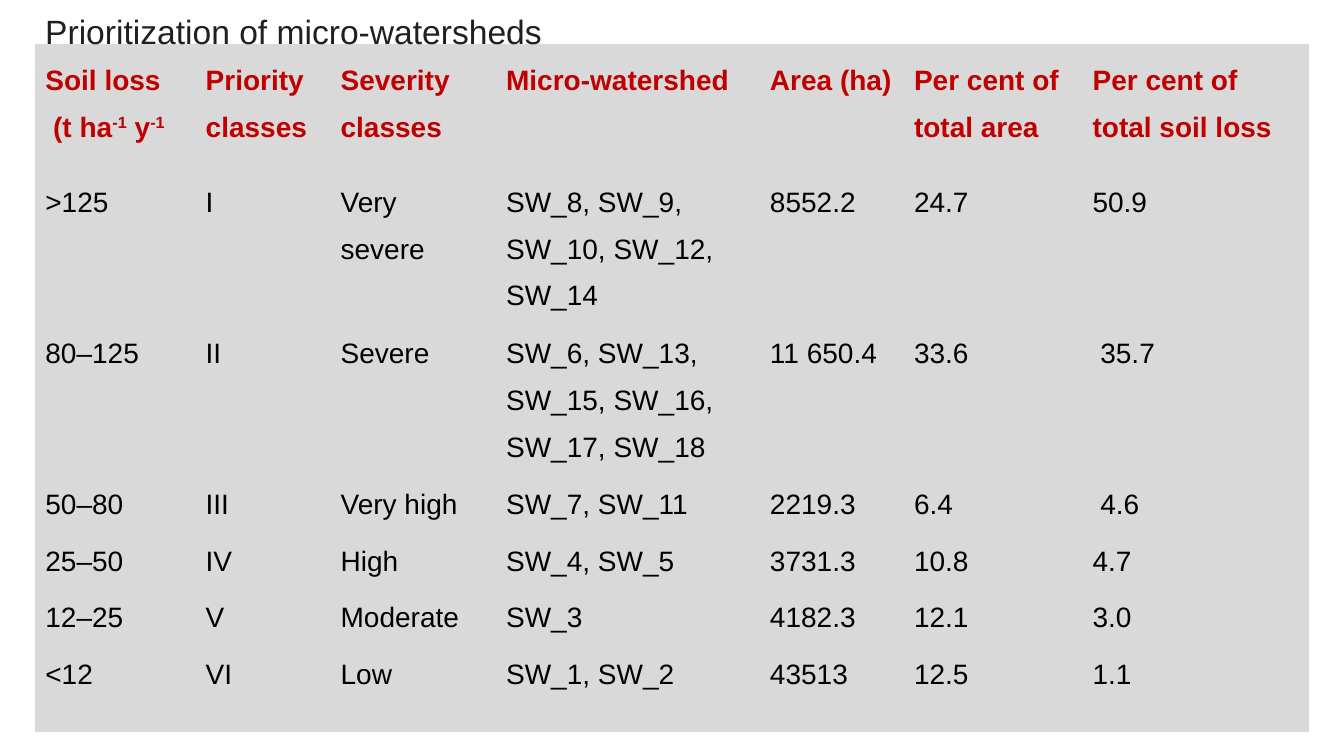
from dataclasses import dataclass

from pptx import Presentation
from pptx.dml.color import RGBColor as Rgb
from pptx.enum.text import MSO_AUTO_SIZE as AutoSize
from pptx.util import Cm, Pt


@dataclass(frozen=True)
class Theme:
    font: str = "Arial"
    title_size: int = 24
    table_size: int = 20
    line_spacing: float = 1.5
    title: Rgb = Rgb(0x23, 0x1F, 0x20)
    header: Rgb = Rgb(0xC0, 0x00, 0x00)
    body: Rgb = Rgb(0x00, 0x00, 0x00)
    cell: Rgb = Rgb(0xD9, 0xD9, 0xD9)


THEME = Theme()
NO_STYLE_NO_GRID = "{2D5ABB26-0587-4C30-8999-92F81FD0307C}"

COLUMN_WIDTHS = [4.04, 3.4, 4.17, 6.65, 3.63, 4.5, 5.72]
ROW_HEIGHTS = [3.07, 3.81, 3.78, 1.32, 1.32, 1.32, 2.34]

# Text between carets is superscript.
HEADERS = [
    "Soil loss\n (t ha^-1^ y^-1^", "Priority\nclasses", "Severity classes",
    "Micro-watershed", "Area (ha)", "Per cent of\ntotal area",
    "Per cent of\ntotal soil loss",
]
WATERSHED_CLASSES = [
    [">125", "I", "Very severe", "SW_8, SW_9, SW_10, SW_12, SW_14",
     "8552.2", "24.7", "50.9"],
    ["80–125", "II", "Severe", "SW_6, SW_13, SW_15, SW_16, SW_17, SW_18",
     "11 650.4", "33.6", " 35.7"],
    ["50–80", "III", "Very high", "SW_7, SW_11", "2219.3", "6.4", " 4.6"],
    ["25–50", "IV", "High", "SW_4, SW_5", "3731.3", "10.8", "4.7"],
    ["12–25", "V", "Moderate", "SW_3", "4182.3", "12.1", "3.0"],
    ["<12", "VI", "Low", "SW_1, SW_2", "43513", "12.5", "1.1"],
]


def format_run(run, size, color, bold=False):
    run.font.name = THEME.font
    run.font.size = Pt(size)
    run.font.color.rgb = color
    run.font.bold = bold


def fill_cell(cell, text, color, bold):
    cell.fill.solid()
    cell.fill.fore_color.rgb = THEME.cell
    cell.text_frame.text = text.replace("^", "")
    for para, line in zip(cell.text_frame.paragraphs, text.split("\n")):
        para.line_spacing = THEME.line_spacing
        if "^" in line:
            write_superscripts(para, line)
        for run in para.runs:
            format_run(run, THEME.table_size, color, bold)


def write_superscripts(para, line):
    para.clear()
    for index, part in enumerate(line.split("^")):
        if part:
            run = para.add_run()
            run.text = part
            if index % 2:
                run._r.get_or_add_rPr().set("baseline", "30000")


def add_title(page, left, top, width, height):
    box = page.shapes.add_textbox(Cm(left), Cm(top), Cm(width), Cm(height))
    frame = box.text_frame
    frame.text = "Prioritization of micro-watersheds"
    frame.word_wrap = False
    frame.auto_size = AutoSize.SHAPE_TO_FIT_TEXT
    format_run(frame.paragraphs[0].runs[0], THEME.title_size, THEME.title)


def add_priority_table(page, left, top):
    rows = [HEADERS, *WATERSHED_CLASSES]
    graphic = page.shapes.add_table(
        len(rows), len(HEADERS), Cm(left), Cm(top),
        Cm(sum(COLUMN_WIDTHS)), Cm(sum(ROW_HEIGHTS)))
    table = graphic.table
    table.horz_banding = False
    table.first_row = False
    table._tbl.tblPr[0].text = NO_STYLE_NO_GRID
    for column, width in zip(table.columns, COLUMN_WIDTHS):
        column.width = Cm(width)
    for row, height in zip(table.rows, ROW_HEIGHTS):
        row.height = Cm(height)
    for row_index, texts in enumerate(rows):
        is_header = row_index == 0
        color = THEME.header if is_header else THEME.body
        for column_index, text in enumerate(texts):
            fill_cell(table.cell(row_index, column_index), text, color, is_header)


def main():
    deck = Presentation()
    deck.slide_width, deck.slide_height = Cm(33.87), Cm(19.05)
    page = deck.slides.add_slide(deck.slide_layouts[6])
    add_priority_table(page, left=0.89, top=1.12)
    add_title(page, left=0.89, top=0.15, width=13.16, height=1.27)
    deck.save("out.pptx")


if __name__ == "__main__":
    main()
